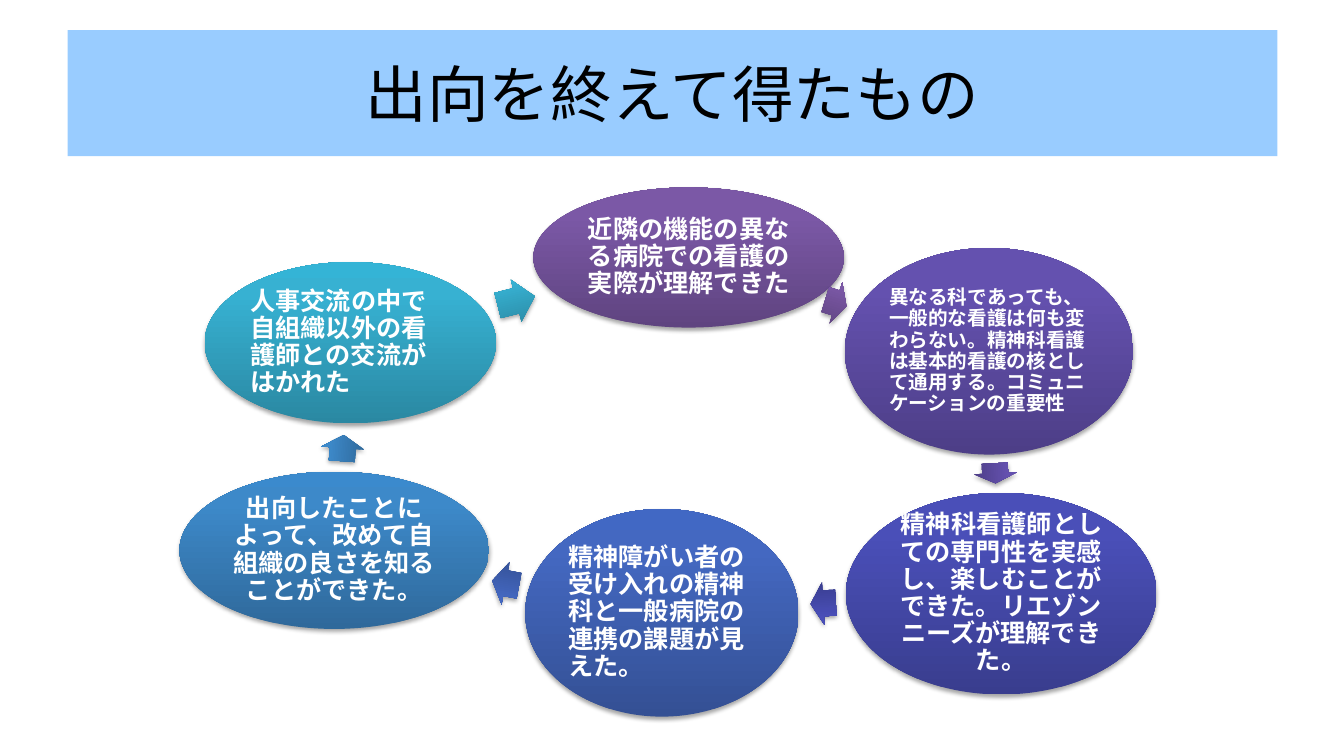
"""Build the slide on what was gained from the secondment."""
from dataclasses import dataclass

from lxml import etree
from pptx import Presentation
from pptx import util as u
from pptx.dml.color import RGBColor
from pptx.enum import shapes, text
from pptx.oxml import ns

EMU_PER_PX = 9144


@dataclass(frozen=True)
class Theme:
    font: str = "Noto Sans CJK JP"
    title_size: int = 44
    body_size: int = 18
    small_size: int = 14
    band: str = "99CCFF"
    title_ink: str = "000000"
    ink: str = "FFFFFF"
    shadow: str = "000000"


@dataclass(frozen=True)
class Box:
    left: int
    top: int
    width: int
    height: int

    def emu(self) -> list[u.Emu]:
        return [u.Emu(px * EMU_PER_PX)
                for px in (self.left, self.top, self.width, self.height)]


@dataclass(frozen=True)
class Gain:
    wording: str
    oval: Box
    arrow: Box
    turn: float
    shades: tuple[str, str, str]
    centred: bool = True
    size: int = 18
    inset: int = 3


THEME = Theme()
GAINS = [
    Gain("近隣の機能の異なる病院での看護の実際が理解できた",
         Box(529, 186, 308, 139), Box(818, 279, 22, 43), 17.3,
         ("5F4480", "7B58A6", "7C57A8")),
    Gain("異なる科であっても、一般的な看護は何も変わらない。精神科看護は基本的看護の核として通用する。"
         "コミュニケーションの重要性",
         Box(838, 246, 286, 205), Box(977, 448, 20, 43), 87.2,
         ("4D3E87", "6451AF", "6450B2"), False, THEME.small_size, 2),
    Gain("精神科看護師としての専門性を実感し、楽しむことができた。リエゾンニーズが理解できた。",
         Box(839, 489, 308, 200), Box(804, 577, 25, 43), 176.8,
         ("393D8E", "4A4FB8", "484EBB")),
    Gain("精神障がい者の受け入れの精神科と一般病院の連携の課題が見えた。",
         Box(521, 505, 271, 206), Box(488, 557, 27, 43), 190.8,
         ("345094", "4468C1", "4168C4"), False),
    Gain("出向したことによって、改めて自組織の良さを知ることができた。",
         Box(178, 468, 307, 156), Box(327, 423, 26, 43), 274.2,
         ("2F699B", "3D89C9", "3B8ACD")),
    Gain("人事交流の中で自組織以外の看護師との交流がはかれた",
         Box(203, 260, 289, 160), Box(493, 277, 38, 43), 345.9,
         ("2A88A2", "37B1D2", "34B4D6"), False),
]


def write(frame, wording: str, size: int, ink: str, bold: bool, centred: bool) -> None:
    frame.text = wording
    frame.word_wrap = True
    frame.auto_size = text.MSO_AUTO_SIZE.NONE
    frame.vertical_anchor = text.MSO_ANCHOR.MIDDLE
    paragraph = frame.paragraphs[0]
    paragraph.alignment = text.PP_ALIGN.CENTER if centred else text.PP_ALIGN.LEFT
    run = paragraph.runs[0]
    run.font.name = THEME.font
    run.font.size = u.Pt(size)
    run.font.bold = bold
    run.font.color.rgb = RGBColor.from_string(ink)
    latin = run.font._element.find(ns.qn("a:latin"))
    east_asian = etree.Element(ns.qn("a:ea"), typeface=THEME.font)
    latin.addnext(east_asian)


def add_shaded(slide, preset: shapes.MSO_SHAPE, box: Box, shades: tuple[str, str, str]):
    shape = slide.shapes.add_shape(preset, *box.emu())
    shape.line.fill.background()
    properties = shape._element.spPr
    gradient = etree.Element(ns.qn("a:gradFill"), rotWithShape="1")
    stops = etree.SubElement(gradient, ns.qn("a:gsLst"))
    for position, shade in zip((0, 80, 100), shades):
        stop = etree.SubElement(stops, ns.qn("a:gs"), pos=str(position * 1000))
        etree.SubElement(stop, ns.qn("a:srgbClr"), val=shade)
    etree.SubElement(gradient, ns.qn("a:lin"), ang="16200000", scaled="0")
    properties.find(ns.qn("a:prstGeom")).addnext(gradient)
    effects = etree.SubElement(properties, ns.qn("a:effectLst"))
    shadow = etree.SubElement(effects, ns.qn("a:outerShdw"), blurRad=str(u.Pt(3.1)),
                              dist=str(u.Pt(1.8)), dir="5400000", rotWithShape="0")
    colour = etree.SubElement(shadow, ns.qn("a:srgbClr"), val=THEME.shadow)
    etree.SubElement(colour, ns.qn("a:alpha"), val="35000")
    return shape


def add_gain(slide, gain: Gain) -> None:
    oval = add_shaded(slide, shapes.MSO_SHAPE.OVAL, gain.oval, gain.shades)
    frame = oval.text_frame
    write(frame, gain.wording, gain.size, THEME.ink, True, gain.centred)
    frame.paragraphs[0].line_spacing = 0.9
    inset = u.Emu(gain.inset * EMU_PER_PX)
    frame.margin_left = frame.margin_right = inset
    frame.margin_top = frame.margin_bottom = inset
    arrow = add_shaded(slide, shapes.MSO_SHAPE.RIGHT_ARROW, gain.arrow, gain.shades)
    arrow.adjustments[0] = 0.6
    arrow.adjustments[1] = 0.5
    arrow.rotation = gain.turn


def add_title(slide, wording: str, box: Box) -> None:
    title = slide.shapes.title
    title.left, title.top, title.width, title.height = box.emu()
    title.fill.solid()
    title.fill.fore_color.rgb = RGBColor.from_string(THEME.band)
    write(title.text_frame, wording, THEME.title_size, THEME.title_ink, False, True)


def main() -> None:
    deck = Presentation()
    deck.slide_width = u.Emu(1333 * EMU_PER_PX)
    deck.slide_height = u.Emu(750 * EMU_PER_PX)
    slide = deck.slides.add_slide(deck.slide_layouts.get_by_name("Title Only"))
    add_title(slide, "出向を終えて得たもの", Box(67, 30, 1200, 125))
    for gain in GAINS:
        add_gain(slide, gain)
    deck.save("out.pptx")


if __name__ == "__main__":
    main()
